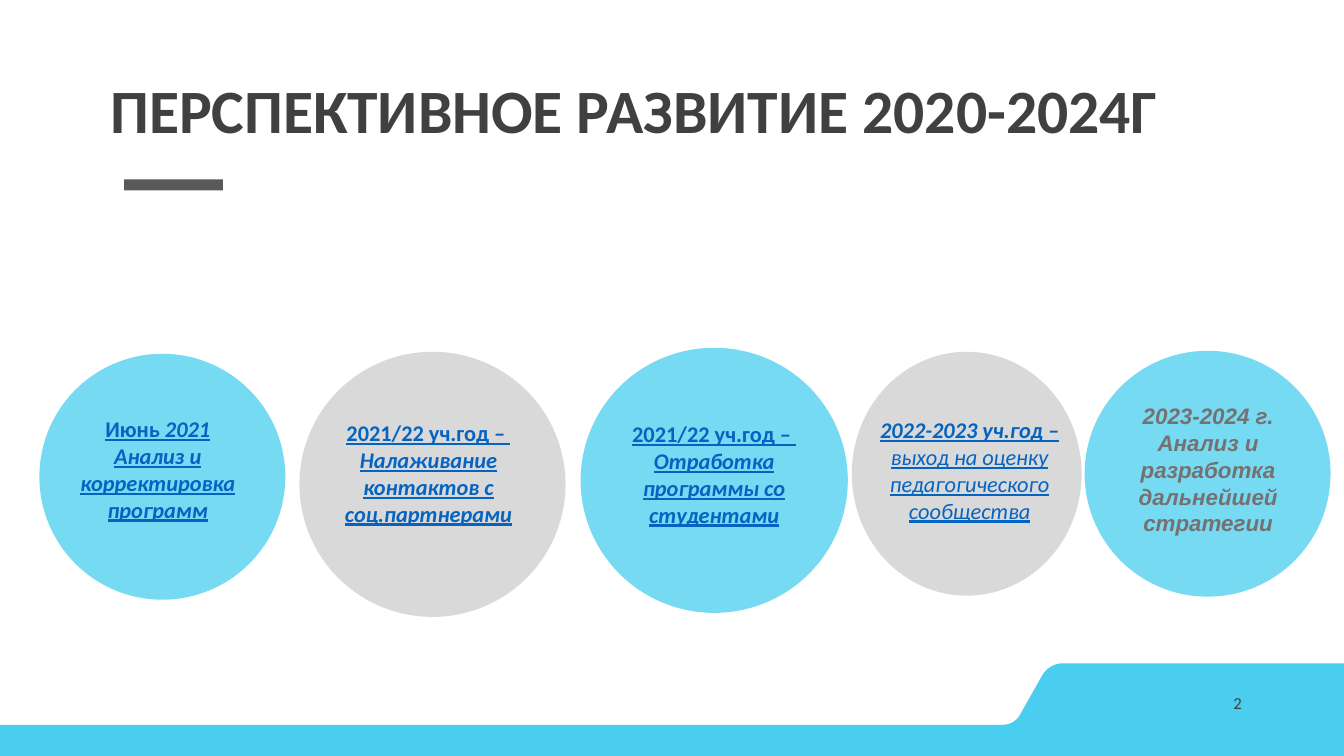
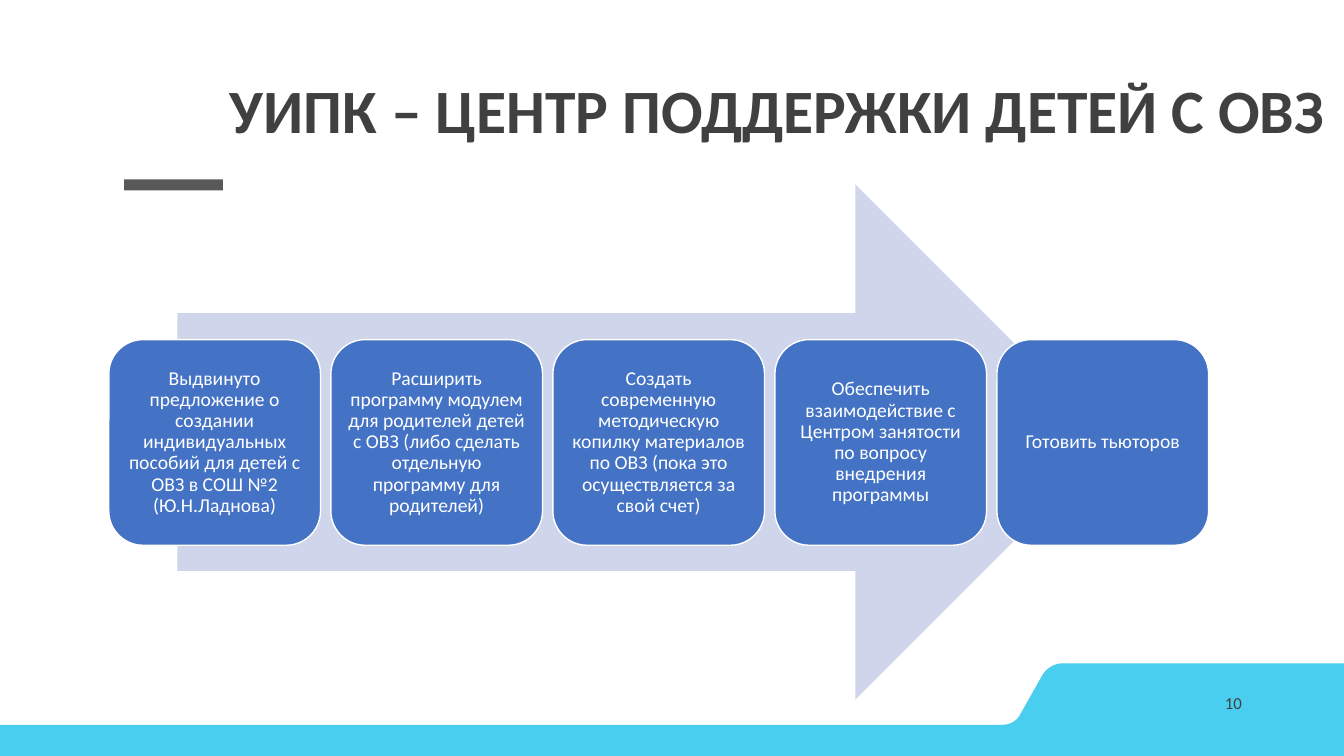
from lxml.etree import SubElement
from pptx import Presentation
from pptx.dml.color import RGBColor
from pptx.enum.shapes import MSO_SHAPE
from pptx.enum.text import MSO_ANCHOR, MSO_AUTO_SIZE, PP_ALIGN
from pptx.oxml.ns import qn
from pptx.util import Inches, Pt

COLORS = {
    "band": "49CEEF", "accent": "595959", "title": "404040",
    "sky": "4ACEEF", "silver": "D9D9D9", "link": "0563C1", "muted": "767171",
    "arrow": "CFD5EA", "step": "4472C4", "white": "FFFFFF",
}
TITLE_ONLY = 5


def rgb(name):
    return RGBColor.from_string(COLORS[name])


def bezier(start, control_1, control_2, end, pieces=12):
    """Points along a cubic curve, without its start."""
    points = []
    for i in range(1, pieces + 1):
        t = i / pieces
        weights = ((1 - t) ** 3, 3 * t * (1 - t) ** 2, 3 * t * t * (1 - t), t ** 3)
        points.append(tuple(
            sum(w * value for w, value in zip(weights, axis))
            for axis in zip(start, control_1, control_2, end)))
    return points


class Deck:
    """Style and current slide; every box is (left, top, width, height) in percent."""

    def __init__(self):
        self.prs = Presentation()
        self.prs.slide_width = Inches(13.333)
        self.prs.slide_height = Inches(7.5)
        self.slide = None

    def x(self, share):
        return round(self.prs.slide_width * share / 100)

    def y(self, share):
        return round(self.prs.slide_height * share / 100)

    def place(self, box):
        left, top, width, height = box
        return self.x(left), self.y(top), self.x(width), self.y(height)

    def new_slide(self, title, title_box, number):
        layout = self.prs.slide_layouts[TITLE_ONLY]
        self.slide = self.prs.slides.add_slide(layout)
        self.band()
        self.shape(MSO_SHAPE.RECTANGLE, (9.23, 23.73, 7.35, 1.47), "accent")
        heading = self.slide.shapes.title
        heading.left, heading.top, heading.width, heading.height = self.place(title_box)
        self.fill_text(heading.text_frame, [[(title, "b")]], 44, "title",
                       anchor=MSO_ANCHOR.MIDDLE, spacing=0.9)
        self.text((70.65, 90.27, 22.5, 5.33), [[(number, "")]], 12, "title",
                  align=PP_ALIGN.RIGHT, anchor=MSO_ANCHOR.MIDDLE)

    def band(self):
        """Footer band with a raised tab on the right."""
        tab_top, band_top = 87.73, 95.87
        outline = [(79.13, tab_top)]
        outline += bezier(outline[-1], (78.45, tab_top), (77.85, 88.4), (77.55, 89.33))
        outline.append((75.9, 94.53))
        outline += bezier(outline[-1], (75.68, 95.33), (75.15, band_top), (74.63, band_top))
        outline += [(0, band_top), (0, 100), (100, 100), (100, tab_top)]
        points = [(self.x(px), self.y(py)) for px, py in outline]
        builder = self.slide.shapes.build_freeform(*points[0])
        builder.add_line_segments(points[1:], close=True)
        self.paint(builder.convert_to_shape(), "band")

    def paint(self, shape, fill, line=None, alpha=None):
        shape.shadow.inherit = False
        shape.fill.solid()
        shape.fill.fore_color.rgb = rgb(fill)
        if alpha:
            color = shape.element.spPr.find(qn("a:solidFill"))[0]
            SubElement(color, qn("a:alpha")).set("val", str(alpha * 1000))
        if line:
            shape.line.color.rgb = rgb(line)
            shape.line.width = Pt(1)
        else:
            shape.line.fill.background()

    def shape(self, kind, box, fill, line=None, alpha=None):
        shape = self.slide.shapes.add_shape(kind, *self.place(box))
        self.paint(shape, fill, line, alpha)
        return shape

    def text(self, box, paragraphs, size, color, **layout):
        frame = self.slide.shapes.add_textbox(*self.place(box)).text_frame
        self.fill_text(frame, paragraphs, size, color, **layout)

    def fill_text(self, frame, paragraphs, size, color, font="Calibri",
                  align=PP_ALIGN.CENTER, anchor=MSO_ANCHOR.TOP, spacing=1.0):
        """Fill a frame; each run is (text, marks), marks being any of b, i, u."""
        frame.word_wrap = True
        frame.auto_size = MSO_AUTO_SIZE.NONE
        frame.vertical_anchor = anchor
        for i, runs in enumerate(paragraphs):
            paragraph = frame.add_paragraph() if i else frame.paragraphs[0]
            paragraph.alignment = align
            paragraph.line_spacing = spacing
            for words, marks in runs:
                run = paragraph.add_run()
                run.text = words
                run.font.name = font
                run.font.size = Pt(size)
                run.font.color.rgb = rgb(color)
                run.font.bold = "b" in marks
                run.font.italic = "i" in marks
                run.font.underline = "u" in marks

    def stage(self, circle, caption, paragraphs, fill, alpha=None,
              color="link", font="Calibri"):
        self.shape(MSO_SHAPE.OVAL, circle, fill, alpha=alpha)
        self.text(caption, paragraphs, 16, color, font=font)

    def step(self, box, words):
        card = self.shape(MSO_SHAPE.ROUNDED_RECTANGLE, box, "step", line="white")
        frame = card.text_frame
        frame.margin_left = frame.margin_right = Inches(0.06)
        frame.margin_top = frame.margin_bottom = Inches(0.06)
        self.fill_text(frame, [[(words, "")]], 14, "white",
                       anchor=MSO_ANCHOR.MIDDLE, spacing=0.9)


def development_slide(deck):
    deck.new_slide("ПЕРСПЕКТИВНОЕ РАЗВИТИЕ 2020-2024Г ", (2.93, 5.33, 89.63, 19.33), "2")
    sky = {"fill": "sky", "alpha": 75}
    silver = {"fill": "silver"}
    stages = [
        ((2.93, 46.8, 18.3, 32.53), (4.95, 54.27, 13.58, 15.73),
         [[("Июнь", "bu"), (" 2021", "biu")],
          [("Анализ и корректировка программ", "biu")]], sky),
        ((22.28, 46.53, 19.8, 35.07), (24.68, 54.8, 14.4, 15.73),
         [[("2021/22 уч.год – ", "bu")],
          [("Налаживание контактов с соц.партнерами", "biu")]], silver),
        ((43.2, 46, 19.88, 35.07), (45.75, 54.93, 14.78, 15.73),
         [[("2021/22 уч.год – ", "bu")],
          [("Отработка программы со студентами", "biu")]], sky),
        ((63.38, 46.53, 17.1, 32.27), (63.6, 54.4, 17.1, 15.73),
         [[("2022-2023 уч.год – ", "biu"),
           ("выход на оценку педагогического сообщества", "iu")]], silver),
        ((80.7, 46.4, 18.3, 32.53), (83.1, 52.53, 13.58, 19.33),
         [[("2023-2024 г.", "bi")],
          [("Анализ и разработка дальнейшей стратегии", "bi")]],
         {**sky, "color": "muted", "font": "Arial"}),
    ]
    for circle, caption, paragraphs, style in stages:
        deck.stage(circle, caption, paragraphs, **style)


def support_center_slide(deck):
    deck.new_slide("УИПК – ЦЕНТР ПОДДЕРЖКИ ДЕТЕЙ С ОВЗ", (15.75, 5.33, 84.25, 19.33), "10")
    deck.shape(MSO_SHAPE.RIGHT_ARROW, (13.2, 24.4, 69.6, 68.13), "arrow")
    steps = [
        "Выдвинуто предложение о создании индивидуальных пособий для детей "
        "с ОВЗ в СОШ №2 (Ю.Н.Ладнова)",
        "Расширить программу модулем для родителей детей с ОВЗ "
        "(либо сделать отдельную программу для родителей)",
        "Создать современную методическую копилку материалов по ОВЗ "
        "(пока это осуществляется за свой счет)",
        "Обеспечить взаимодействие с Центром занятости по вопросу "
        "внедрения программы",
        "Готовить тьюторов",
    ]
    first_left, pitch = 8.1, 16.52
    for column, words in enumerate(steps):
        deck.step((first_left + column * pitch, 44.93, 15.75, 27.2), words)


def main():
    deck = Deck()
    development_slide(deck)
    support_center_slide(deck)
    deck.prs.save("out.pptx")


if __name__ == "__main__":
    main()
